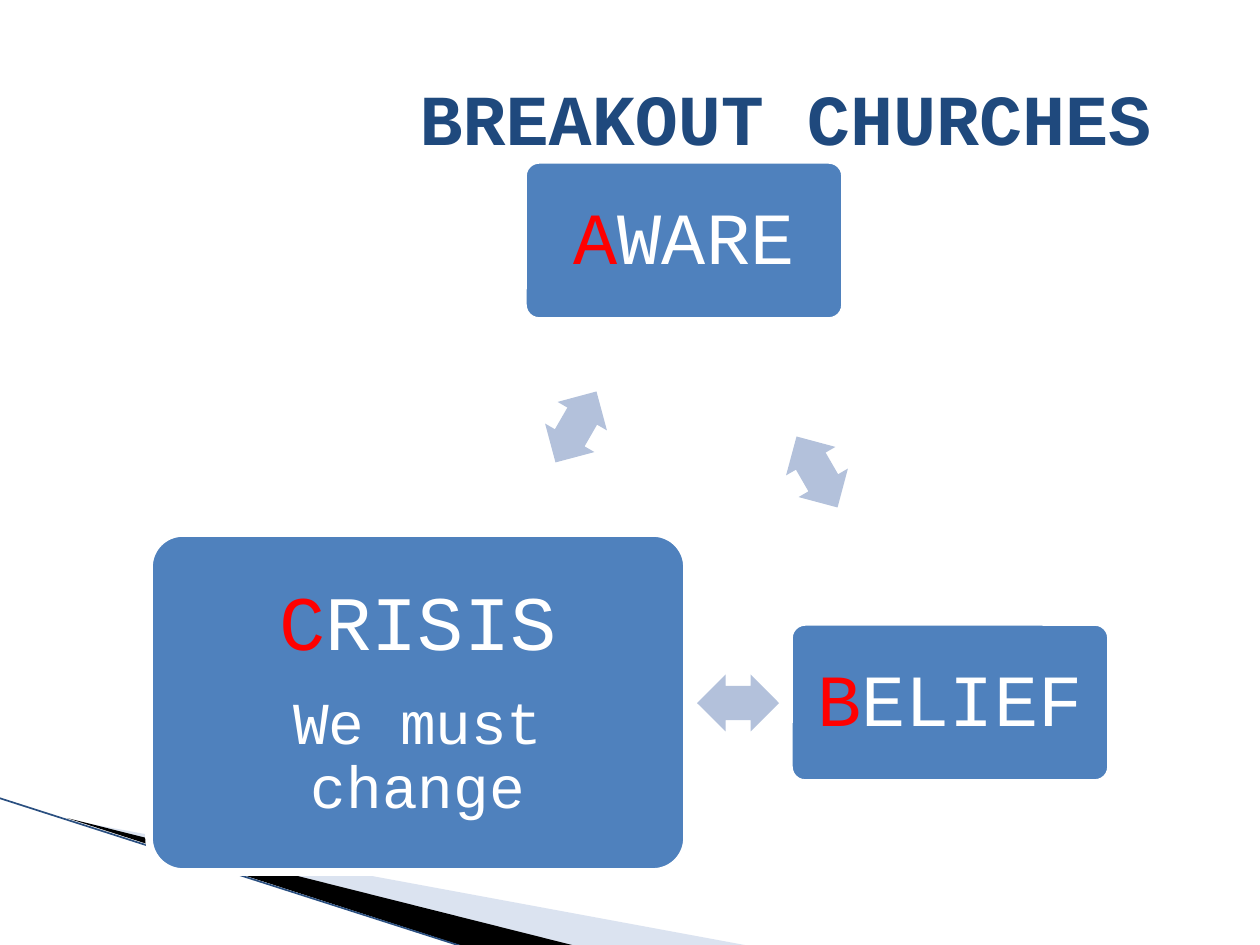
import pptx
import pptx.util
import pptx.dml.color
import pptx.enum.shapes
import pptx.enum.text
import pptx.oxml
import pptx.oxml.ns

FONT = "Courier New"
TITLE = "BREAKOUT CHURCHES"
TITLE_INDENT = 344

# box (left, top, width, height), inset, paragraphs of (text, size, red initial)
CARDS = [
    ((523, 160, 322, 161), 16, [("AWARE", 42, True)]),
    ((789, 622, 322, 161), 16, [("BELIEF", 42, True)]),
    ((149, 533, 538, 339), 18, [("CRISIS", 44, True), ("We must change", 34, False)]),
]
# centre x, centre y, rotation
ARROWS = [(817, 472, 60), (738, 703, 180), (576, 427, 300)]
ARROW_SIZE = (82, 57)

# points, colour, opacity in percent
WEDGES = [
    ([(69, 820), (750, 946), (575, 946)], "A7B9DB", 40),
    ([(67, 818), (576, 946), (469, 948)], "000000", 100),
]
EDGE = ((-1, 798), (467, 948))

SHAPE = pptx.enum.shapes.MSO_SHAPE
ALIGN = pptx.enum.text.PP_ALIGN
MIDDLE = pptx.enum.text.MSO_ANCHOR.MIDDLE


def px(n):
    return round(n * 914400 / 126)


def rgb(value):
    return pptx.dml.color.RGBColor.from_string(value)


def add_xml(parent, tag, **attrs):
    child = pptx.oxml.parse_xml(f"<a:{tag} {pptx.oxml.ns.nsdecls('a')}/>")
    for name, value in attrs.items():
        child.set(name, str(value))
    parent.append(child)


def paint(sp, color):
    sp.shadow.inherit = False
    sp.fill.solid()
    sp.fill.fore_color.rgb = rgb(color)
    sp.line.fill.background()


def style(r, size, color, bold=False):
    r.font.name = FONT
    r.font.size = pptx.util.Pt(size)
    r.font.bold = bold
    r.font.color.rgb = rgb(color)


def add_wedge(s, points, color, opacity):
    start, *rest = [(px(x), px(y)) for x, y in points]
    builder = s.shapes.build_freeform(*start)
    builder.add_line_segments(rest)
    sp = builder.convert_to_shape()
    paint(sp, color)
    if opacity < 100:
        clr = sp._element.spPr.find(".//" + pptx.oxml.ns.qn("a:srgbClr"))
        add_xml(clr, "alpha", val=opacity * 1000)


def add_edge(s):
    start, end = EDGE
    line = s.shapes.add_connector(
        pptx.enum.shapes.MSO_CONNECTOR.STRAIGHT, *map(px, start + end))
    line.line.color.rgb = rgb("2A4F80")
    line.line.width = pptx.util.Pt(0.95)
    add_xml(line._element.spPr, "effectLst")


def add_card(s, box, inset, paragraphs):
    sp = s.shapes.add_shape(SHAPE.ROUNDED_RECTANGLE, *map(px, box))
    sp.adjustments[0] = 0.1
    paint(sp, "4F81BD")
    sp.line.color.rgb = rgb("FFFFFF")
    sp.line.width = pptx.util.Pt(4.33)
    tf = sp.text_frame
    tf.word_wrap = True
    tf.vertical_anchor = MIDDLE
    tf.margin_left = tf.margin_right = tf.margin_top = tf.margin_bottom = px(inset)
    for i, (text, size, red_initial) in enumerate(paragraphs):
        p = tf.add_paragraph() if i else tf.paragraphs[0]
        p.alignment = ALIGN.CENTER
        p.line_spacing = 0.9
        if i < len(paragraphs) - 1:
            p.space_after = pptx.util.Pt(round(size * 0.35))
        parts = [(text[0], "FF0000"), (text[1:], "FFFFFF")] if red_initial else [(text, "FFFFFF")]
        for part, color in parts:
            r = p.add_run()
            r.text = part
            style(r, size, color)


def add_arrow(s, x, y, rotation):
    w, h = ARROW_SIZE
    sp = s.shapes.add_shape(
        SHAPE.LEFT_RIGHT_ARROW, px(x - w / 2), px(y - h / 2), px(w), px(h))
    sp.adjustments[0], sp.adjustments[1] = 0.6, 0.5
    sp.rotation = rotation
    paint(sp, "B3C1DB")


def set_title(title):
    title.left, title.top, title.width, title.height = map(px, (63, 38, 1134, 158))
    tf = title.text_frame
    tf.text = TITLE
    tf.word_wrap = True
    tf.vertical_anchor = MIDDLE
    p = tf.paragraphs[0]
    p.alignment = ALIGN.LEFT
    p._p.get_or_add_pPr().set("marL", str(px(TITLE_INDENT)))
    style(p.runs[0], 41, "1F497D", bold=True)


def main():
    prs = pptx.Presentation()
    prs.slide_width, prs.slide_height = px(1260), px(945)
    s = prs.slides.add_slide(prs.slide_layouts[5])
    set_title(s.shapes.title)
    for wedge in WEDGES:
        add_wedge(s, *wedge)
    add_edge(s)
    for card in CARDS:
        add_card(s, *card)
    for arrow in ARROWS:
        add_arrow(s, *arrow)
    prs.save("out.pptx")


if __name__ == "__main__":
    main()
